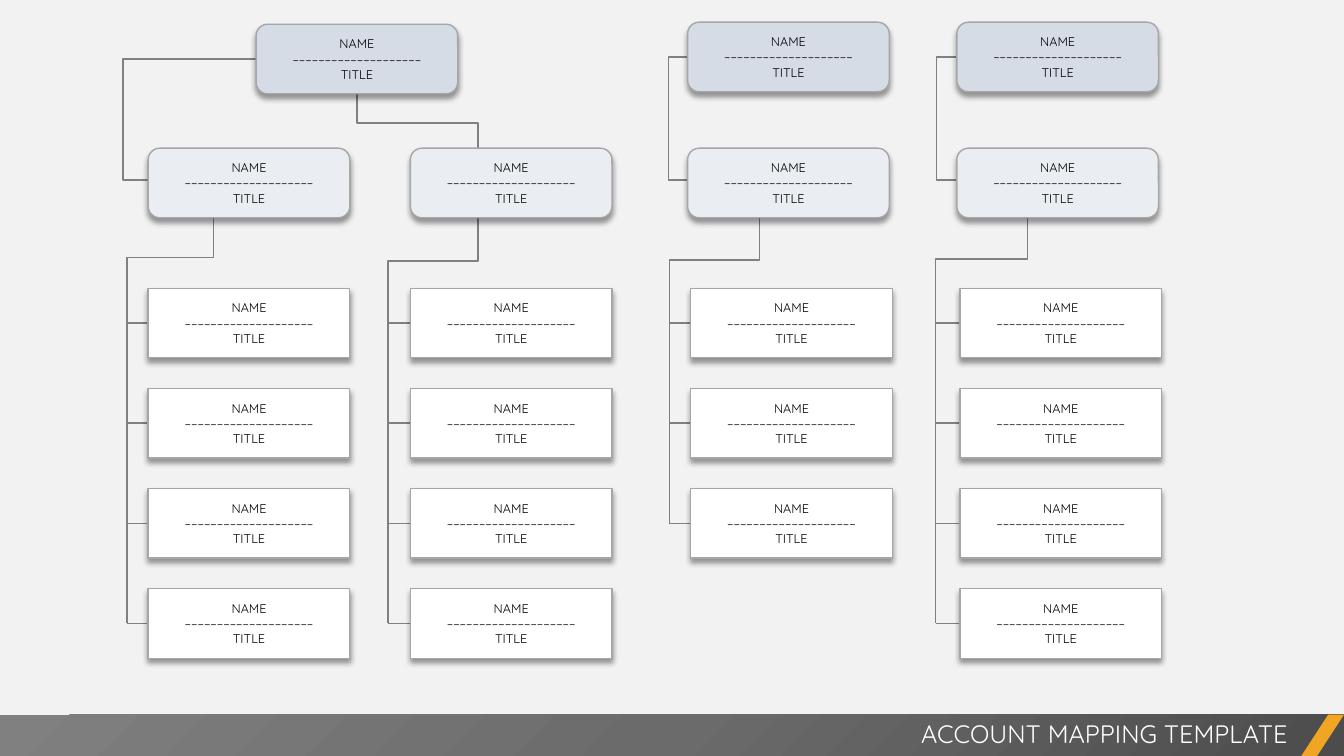
from lxml.etree import SubElement
from pptx import Presentation
from pptx.dml.color import RGBColor
from pptx.enum.shapes import MSO_CONNECTOR, MSO_SHAPE
from pptx.enum.text import MSO_ANCHOR, MSO_AUTO_SIZE, PP_ALIGN
from pptx.oxml.ns import qn
from pptx.util import Emu, Inches, Pt

COLORS = {
    "background": "F2F2F2", "head": "D6DCE5", "manager": "EAEEF3",
    "contact": "FFFFFF", "border": "A6A6A6", "link": "808080",
    "accent": "F0A622", "text": "000000", "title": "FFFFFF", "shadow": "000000",
}
BAR_STOPS = {0: "4C4C4C", 50: "6B6B6B", 100: "808080"}
CELL = Inches(0.1)  # width of a grid column and height of a grid row
CARD_LINES = ("NAME", "–" * 20, "TITLE")
CARD_WIDTH, CARD_HEIGHT = 20, 6.9


def grid(cells):
    return Emu(round(cells * CELL))


def color(name):
    return RGBColor.from_string(COLORS[name])


def apply(target, formats):
    for attribute, value in formats.items():
        setattr(target, attribute, value)


def add_xml(parent, tag, **attributes):
    return SubElement(parent, qn(tag), {key: str(value) for key, value in attributes.items()})


class ChartSlide:
    font = {"name": "Quicksand", "bold": False}
    card_frame = {
        "word_wrap": True, "vertical_anchor": MSO_ANCHOR.MIDDLE,
        **{f"margin_{side}": Inches(0.02) for side in ("left", "right", "top", "bottom")},
    }
    title_frame = {
        "word_wrap": True, "auto_size": MSO_AUTO_SIZE.NONE,
        "vertical_anchor": MSO_ANCHOR.TOP, "margin_left": Inches(0.1),
        "margin_right": Inches(0.1), "margin_top": Inches(0.05), "margin_bottom": Inches(0.05),
    }

    def __init__(self, presentation):
        title_only = presentation.slide_layouts[5]
        self.slide = presentation.slides.add_slide(title_only)
        self.shapes = self.slide.shapes
        background = self.slide.background.fill
        background.solid()
        background.fore_color.rgb = color("background")

    def set_text(self, frame, lines, size, tint, alignment):
        frame.text = "\n".join(lines)
        for paragraph in frame.paragraphs:
            paragraph.alignment = alignment
            apply(paragraph.font, {**self.font, "size": Pt(size)})
            paragraph.font.color.rgb = color(tint)

    def block(self, kind, left, top, width, height, fill):
        shape = self.shapes.add_shape(kind, *map(grid, (left, top, width, height)))
        shape.shadow.inherit = False
        shape.fill.solid()
        shape.fill.fore_color.rgb = color(fill)
        shape.line.fill.background()
        return shape

    def card(self, kind, left, top, fill):
        card = self.block(kind, left, top, CARD_WIDTH, CARD_HEIGHT, fill)
        card.line.color.rgb = color("border")
        card.line.width = Pt(1)
        effects = card._element.spPr.find(qn("a:effectLst"))
        shadow = add_xml(effects, "a:outerShdw", blurRad=Pt(4), dist=Pt(3),
                         dir=90 * 60000, rotWithShape=0)
        tint = add_xml(shadow, "a:srgbClr", val=COLORS["shadow"])
        add_xml(tint, "a:alpha", val=40000)
        apply(card.text_frame, self.card_frame)
        self.set_text(card.text_frame, CARD_LINES, 9, "text", PP_ALIGN.CENTER)

    def link(self, start, end, kind=MSO_CONNECTOR.STRAIGHT):
        link = self.shapes.add_connector(kind, *map(grid, (*start, *end)))
        link.line.color.rgb = color("link")
        link.line.width = Pt(1)
        add_xml(link._element.spPr, "a:effectLst")
        return link._element.spPr

    def elbow(self, start, end, bend, vertical=False):
        """Bend at a column, or at a row when the link leaves vertically."""
        (x1, y1), (x2, y2) = start, end
        share = (bend - y1) / (y2 - y1) if vertical else (bend - x1) / (x2 - x1)
        if vertical:  # lay the link on its side, then turn it by 90 degrees
            x, y, length, across = (x1 + x2) / 2, (y1 + y2) / 2, y2 - y1, x1 - x2
            start = (x - length / 2, y - across / 2)
            end = (x + length / 2, y + across / 2)
        properties = self.link(start, end, MSO_CONNECTOR.ELBOW)
        if vertical:
            properties.find(qn("a:xfrm")).set("rot", str(90 * 60000))
        adjustments = properties.find(qn("a:prstGeom")).find(qn("a:avLst"))
        add_xml(adjustments, "a:gd", name="adj1", fmla=f"val {round(share * 100000)}")

    def footer(self, text):
        bar = self.block(MSO_SHAPE.RECTANGLE, 0, 70.9, 133.33, 4.2, "link")
        bar.fill.gradient()
        gradient = bar._element.spPr.find(qn("a:gradFill"))
        for child in list(gradient):
            gradient.remove(child)
        stops = add_xml(gradient, "a:gsLst")
        for position, tint in BAR_STOPS.items():
            stop = add_xml(stops, "a:gs", pos=position * 1000)
            add_xml(stop, "a:srgbClr", val=tint)
        focus = add_xml(gradient, "a:path", path="circle")
        add_xml(focus, "a:fillToRect", l=100000, t=100000)

        stripe = self.block(MSO_SHAPE.PARALLELOGRAM, 129, 70.9, 4.3, 4.2, "accent")
        stripe.adjustments[0] = 0.65

        title = self.shapes.title
        apply(title, {"left": grid(52.5), "top": grid(70.8),
                      "width": grid(76.2), "height": grid(4)})
        apply(title.text_frame, self.title_frame)
        self.set_text(title.text_frame, [text], 18, "title", PP_ALIGN.RIGHT)
        self.shapes._spTree.append(title._element)  # in front of the bar


# Teams: manager and contact columns, spine column, trunk column and bend row, contacts
TEAMS = [
    (14.7, 14.7, 12.6, 21.2, 25.6, 4),
    (40.7, 40.7, 38.5, 47.4, 25.9, 4),
    (68.2, 68.5, 66.4, 75.3, 25.8, 3),
    (94.9, 95.2, 92.8, 101.9, 25.7, 4),
]
# Heads: column and row, column of the first manager below, bend column of the link
HEADS = [(25.4, 2.4, 14.7, 12.2), (68.2, 2.2, 68.2, 66.3), (94.9, 2.2, 94.9, 92.9)]
MANAGER_ROW = 14.7
CONTACT_ROWS = [28.6 + i * (58.4 - 28.6) / 3 for i in range(4)]
HALF = CARD_HEIGHT / 2


def main():
    presentation = Presentation()
    apply(presentation, {"slide_width": Inches(13.33), "slide_height": Inches(7.5)})
    chart = ChartSlide(presentation)
    chart.footer("ACCOUNT MAPPING TEMPLATE")
    manager_middle = MANAGER_ROW + HALF

    # Links from managers to contacts
    for _, contact, spine, trunk, bend, count in TEAMS:
        for row in CONTACT_ROWS[:count]:
            chart.link((spine, row + HALF), (contact + 4, row + HALF))
        last = CONTACT_ROWS[count - 1] + HALF
        chart.elbow((trunk, manager_middle), (spine, last), bend, vertical=True)

    # Links from heads to managers
    for head, row, manager, bend in HEADS:
        chart.elbow((head + CARD_WIDTH / 2, row + HALF), (manager, manager_middle - 0.3), bend)
    chart.elbow((35.4, 6.2), (47.4, 18.2), 12.2, vertical=True)

    # Cards
    rounded = MSO_SHAPE.FLOWCHART_ALTERNATE_PROCESS
    for head, row, *_ in HEADS:
        chart.card(rounded, head, row, "head")
    for manager, contact, *_, count in TEAMS:
        chart.card(rounded, manager, MANAGER_ROW, "manager")
        for row in CONTACT_ROWS[:count]:
            chart.card(MSO_SHAPE.RECTANGLE, contact, row, "contact")

    presentation.save("out.pptx")


if __name__ == "__main__":
    main()
